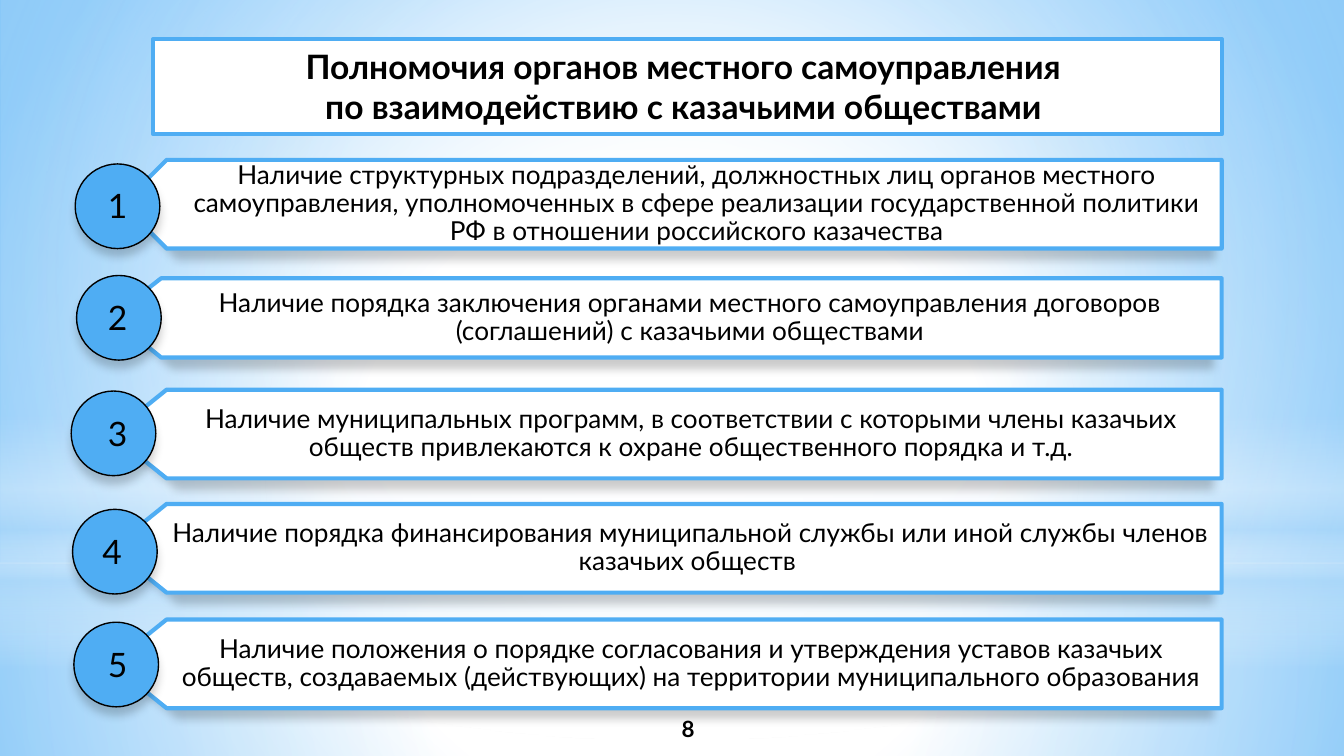
from lxml import etree
from pptx import Presentation
from pptx import util as u
from pptx.dml.color import RGBColor
from pptx.enum import shapes, text
from pptx.oxml import ns

PX = 9144  # EMU, 100 px to the inch
FONT = "Lato"
BLACK, WHITE, BLUE, PALE = "000000", "FFFFFF", "4FADF3", "B4DCFA"
RECT, OVAL = shapes.MSO_SHAPE.RECTANGLE, shapes.MSO_SHAPE.OVAL
TOP, MID = text.MSO_ANCHOR.TOP, text.MSO_ANCHOR.MIDDLE
CENTER = (50, 50, 50, 50)

TITLE = [
    "Полномочия органов местного самоуправления ",
    "по взаимодействию с казачьими обществами ",
]
# tip x, shoulder x, top, height, left inset, disc x, disc y, digit x, wording
ROWS = [
    (91, 124, 119, 66, 46, 56, 122, 64,
     "Наличие структурных подразделений, должностных лиц органов местного "
     "самоуправления, уполномоченных в сфере реализации государственной "
     "политики РФ в отношении российского казачества"),
    (83, 120, 207, 59, 44, 57, 205, 64,
     "Наличие порядка заключения органами местного самоуправления договоров "
     "(соглашений) с казачьими обществами"),
    (83, 124, 290, 66, 46, 53, 291, 64,
     "Наличие муниципальных программ, в соответствии с которыми члены "
     "казачьих обществ привлекаются к охране общественного порядка и т.д."),
    (83, 124, 375, 66, 45, 54, 379, 60,
     "Наличие порядка финансирования муниципальной службы или иной службы "
     "членов казачьих обществ "),
    (83, 124, 461, 66, 46, 55, 463, 64,
     "Наличие положения о порядке согласования и утверждения уставов "
     "казачьих обществ, создаваемых (действующих) на территории "
     "муниципального образования"),
]
RIGHT = 909
DISC = 63


def px(*nums):
    return [u.Emu(n * PX) for n in nums]


def color(code):
    return RGBColor.from_string(code)


def node(parent, tag, **attrs):
    child = etree.SubElement(parent, ns.qn("a:" + tag))
    for key, val in attrs.items():
        child.set(key, str(val))
    return child


def blend(props, stops, focus=None):
    """Swap a solid fill for a gradient: round if focus is given, else vertical."""
    solid = props.find(ns.qn("a:solidFill"))
    grad = etree.Element(ns.qn("a:gradFill"), rotWithShape="1")
    items = node(grad, "gsLst")
    for pos, code, alpha in stops:
        stop = node(items, "gs", pos=pos * 1000)
        tint = node(stop, "srgbClr", val=code)
        if alpha < 100:
            node(tint, "alpha", val=alpha * 1000)
    if focus:
        way = node(grad, "path", path="circle")
        sides = {side: n * 1000 for side, n in zip("ltrb", focus)}
        node(way, "fillToRect", **sides)
    else:
        node(grad, "lin", ang=5400000, scaled=0)
    props.replace(solid, grad)


def paint(shape, fill, line=None, width=0.75):
    shape.shadow.inherit = False
    shape.fill.solid()
    shape.fill.fore_color.rgb = color(fill)
    if line:
        shape.line.color.rgb = color(line)
        shape.line.width = u.Pt(width)
    else:
        shape.line.fill.background()


def shade(shape):
    """Add a soft, slightly smaller shadow straight below the shape."""
    effects = shape._element.spPr.find(ns.qn("a:effectLst"))
    drop = node(effects, "outerShdw", blurRad=u.Pt(5), dist=u.Pt(4),
                dir=5400000, sx=98000, sy=98000, rotWithShape=0)
    tint = node(drop, "srgbClr", val=BLACK)
    node(tint, "alpha", val=20000)


def write(shape, lines, size, bold=False, anchor=TOP, gap=None, inset=10):
    frame = shape.text_frame
    frame.word_wrap = True
    frame.vertical_anchor = anchor
    frame.margin_left, frame.margin_right = px(inset, 10 if inset == 10 else 9)
    frame.margin_top, frame.margin_bottom = px(5, 5)
    for i, line in enumerate(lines):
        para = frame.paragraphs[0] if i == 0 else frame.add_paragraph()
        para.alignment = text.PP_ALIGN.CENTER
        if gap:
            para.line_spacing = gap
        run = para.add_run()
        run.text = line
        run.font.name = FONT
        run.font.size = u.Pt(size)
        run.font.bold = bold
        run.font.color.rgb = color(BLACK)


def glow(slide, kind, box, stops, focus=None):
    shape = slide.shapes.add_shape(kind, *px(*box))
    paint(shape, WHITE)
    blend(shape._element.spPr, stops, focus)


def backdrop(slide):
    slide.background.fill.solid()
    blend(slide._element.cSld.bg.bgPr,
          [(0, WHITE, 100), (42, WHITE, 100), (100, "008BF4", 100)],
          (24, 44, 24, 12))
    glow(slide, RECT, (0, 419, 1000, 144),
         [(0, WHITE, 91), (37, WHITE, 76), (100, PALE, 79)], CENTER)
    glow(slide, RECT, (0, 0, 1000, 419),
         [(0, WHITE, 89), (48, WHITE, 62), (100, PALE, 79)], CENTER)
    glow(slide, RECT, (0, 309, 1000, 188),
         [(0, WHITE, 0), (29, WHITE, 30), (45, PALE, 40),
          (55, WHITE, 26), (65, PALE, 60), (100, WHITE, 0)])
    glow(slide, OVAL, (0, 131, 1000, 419),
         [(0, WHITE, 100), (56, WHITE, 0)], CENTER)


def banner(slide):
    shape = slide.shapes.add_shape(RECT, *px(114, 29, 795, 71))
    paint(shape, WHITE, BLUE, 2.25)
    write(shape, TITLE, 18, bold=True)


def bar(slide, tip, neck, top, high, inset, words):
    """Draw a bar whose left end is a point."""
    low = top + high
    pen = slide.shapes.build_freeform(RIGHT, low, scale=PX)
    pen.add_line_segments([(neck, low), (tip, top + high / 2),
                           (neck, top), (RIGHT, top)], close=True)
    shape = pen.convert_to_shape()
    paint(shape, WHITE, BLUE, 2.25)
    shade(shape)
    write(shape, [words], 14, anchor=MID, gap=0.9, inset=inset)


def label(slide, box, words, size, **style):
    write(slide.shapes.add_textbox(*px(*box)), [words], size, **style)


def disc(slide, left, top, mark, num):
    shape = slide.shapes.add_shape(OVAL, *px(left, top, DISC, DISC))
    paint(shape, BLUE, BLACK)
    shade(shape)
    label(slide, (mark, top + 11, 47, 40), str(num), 18)


def main():
    deck = Presentation()
    deck.slide_width = u.Emu(1000 * PX)
    deck.slide_height = u.Emu(deck.slide_width * 9 // 16)
    slide = deck.slides.add_slide(deck.slide_layouts[6])
    backdrop(slide)
    banner(slide)
    for tip, neck, top, high, inset, *_, words in ROWS:
        bar(slide, tip, neck, top, high, inset, words)
    label(slide, (412, 527, 200, 30), "8", 12, bold=True, anchor=MID)
    for num, row in enumerate(ROWS, 1):
        disc(slide, *row[5:8], num)
    deck.save("out.pptx")


if __name__ == "__main__":
    main()
